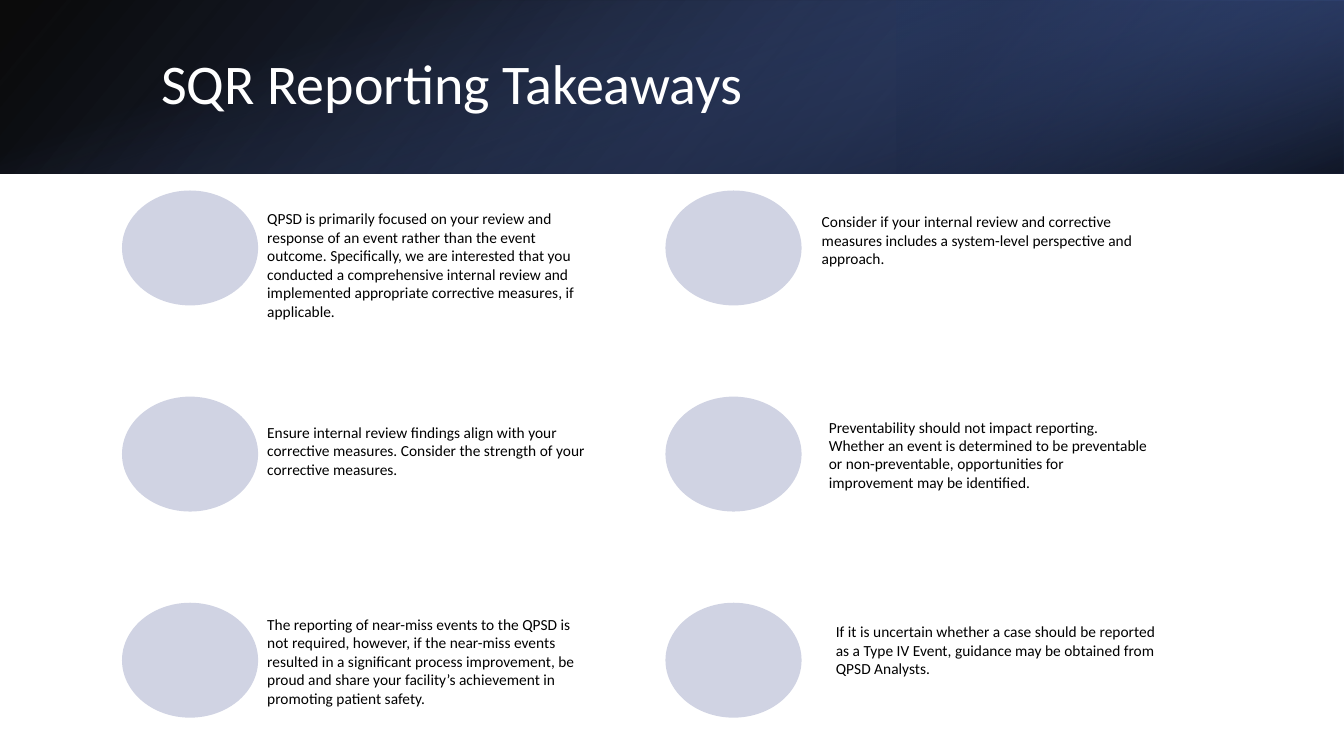
from lxml import etree
from pptx import Presentation
from pptx.dml.color import RGBColor
from pptx.enum.shapes import MSO_SHAPE
from pptx.enum.text import MSO_ANCHOR
from pptx.oxml import parse_xml
from pptx.util import Inches, Pt

RECTANGLE = MSO_SHAPE.RECTANGLE
OVAL = MSO_SHAPE.OVAL
MIDDLE = MSO_ANCHOR.MIDDLE
WHITE = RGBColor(0xFF, 0xFF, 0xFF)
BLACK = RGBColor(0x00, 0x00, 0x00)
LAVENDER = RGBColor(0xD0, 0xD3, 0xE3)
NAVY = RGBColor(0x38, 0x4C, 0x81)
DARK_NAVY = RGBColor(0x25, 0x33, 0x56)
BLUE = RGBColor(0x4A, 0x66, 0xAC)
NAMESPACE = "http://schemas.openxmlformats.org/drawingml/2006/main"


def add_gradient_band(slide, box, rotation, flipped, angle, stops):
    shape = slide.shapes.add_shape(RECTANGLE, *[Inches(value) for value in box])
    shape.shadow.inherit = False
    shape.line.fill.background()
    shape.rotation = rotation
    properties = shape._element.spPr
    if flipped:
        properties.xfrm.set("flipH", "1")
    gradient = parse_xml(
        f'<a:gradFill xmlns:a="{NAMESPACE}" rotWithShape="1"><a:gsLst/>'
        f'<a:lin ang="{angle * 60000}" scaled="0"/></a:gradFill>'
    )
    for position, color, opacity in stops:
        stop = etree.SubElement(gradient[0], f"{{{NAMESPACE}}}gs", pos=str(position * 1000))
        stop_color = etree.SubElement(stop, f"{{{NAMESPACE}}}srgbClr", val=str(color))
        etree.SubElement(stop_color, f"{{{NAMESPACE}}}alpha", val=str(opacity * 1000))
    properties.find(f"{{{NAMESPACE}}}prstGeom").addnext(gradient)


def add_text(slide, box, text, size, color, margin):
    shape = slide.shapes.add_textbox(*[Inches(value) for value in box])
    text_frame = shape.text_frame
    text_frame.word_wrap = True
    text_frame.vertical_anchor = MIDDLE
    text_frame.margin_left = text_frame.margin_right = Inches(margin)
    text_frame.margin_top = text_frame.margin_bottom = Inches(margin / 2)
    text_frame.text = text
    paragraph = text_frame.paragraphs[0]
    font = paragraph.runs[0].font
    font.name = "Calibri"
    font.size = Pt(size)
    font.color.rgb = color
    return paragraph


presentation = Presentation()
presentation.slide_width = Inches(13.33)
presentation.slide_height = Inches(7.5)
slide = presentation.slides.add_slide(presentation.slide_layouts[6])

add_gradient_band(slide, (0, 0, 13.33, 1.72), 0, True, 140,
                  [(0, BLACK, 96), (100, NAVY, 100)])
add_gradient_band(slide, (8.89, 0, 4.44, 1.72), 180, True, 320,
                  [(19, DARK_NAVY, 68), (100, BLUE, 79)])
add_gradient_band(slide, (5.8, -5.8, 1.72, 13.33), 90, False, 340,
                  [(23, BLUE, 0), (99, BLACK, 74)])

title = add_text(slide, (1.5, 0.38, 10.98, 0.96), "SQR Reporting Takeaways", 40, WHITE, 0.1)
title.line_spacing = 0.9

for row in range(3):
    for column in range(2):
        circle = slide.shapes.add_shape(
            OVAL, Inches(1.21 + 5.39 * column), Inches(1.89 + 2.045 * row),
            Inches(1.35), Inches(1.14))
        circle.shadow.inherit = False
        circle.fill.solid()
        circle.fill.fore_color.rgb = LAVENDER
        circle.line.fill.background()

takeaways = [
    (2.65, 2.06, "QPSD is primarily focused on your review and response of an event rather than "
     "the event outcome. Specifically, we are interested that you conducted a comprehensive "
     "internal review and implemented appropriate corrective measures, if applicable."),
    (8.15, 1.81, "Consider if your internal review and corrective measures includes a "
     "system-level perspective and approach."),
    (2.65, 3.9, "Ensure internal review findings align with your corrective measures. "
     "Consider the strength of your corrective measures."),
    (8.22, 3.94, "Preventability should not impact reporting. Whether an event is determined to "
     "be preventable or non-preventable, opportunities for improvement may be identified."),
    (2.65, 5.99, "The reporting of near-miss events to the QPSD is not required, however, if the "
     "near-miss events resulted in a significant process improvement, be proud and share your "
     "facility’s achievement in promoting patient safety."),
    (8.29, 5.88, "If it is uncertain whether a case should be reported as a Type IV Event, "
     "guidance may be obtained from QPSD Analysts."),
]
for left, top, text in takeaways:
    add_text(slide, (left, top, 3.19, 1.14), text, 11, BLACK, 0)

presentation.save("out.pptx")
